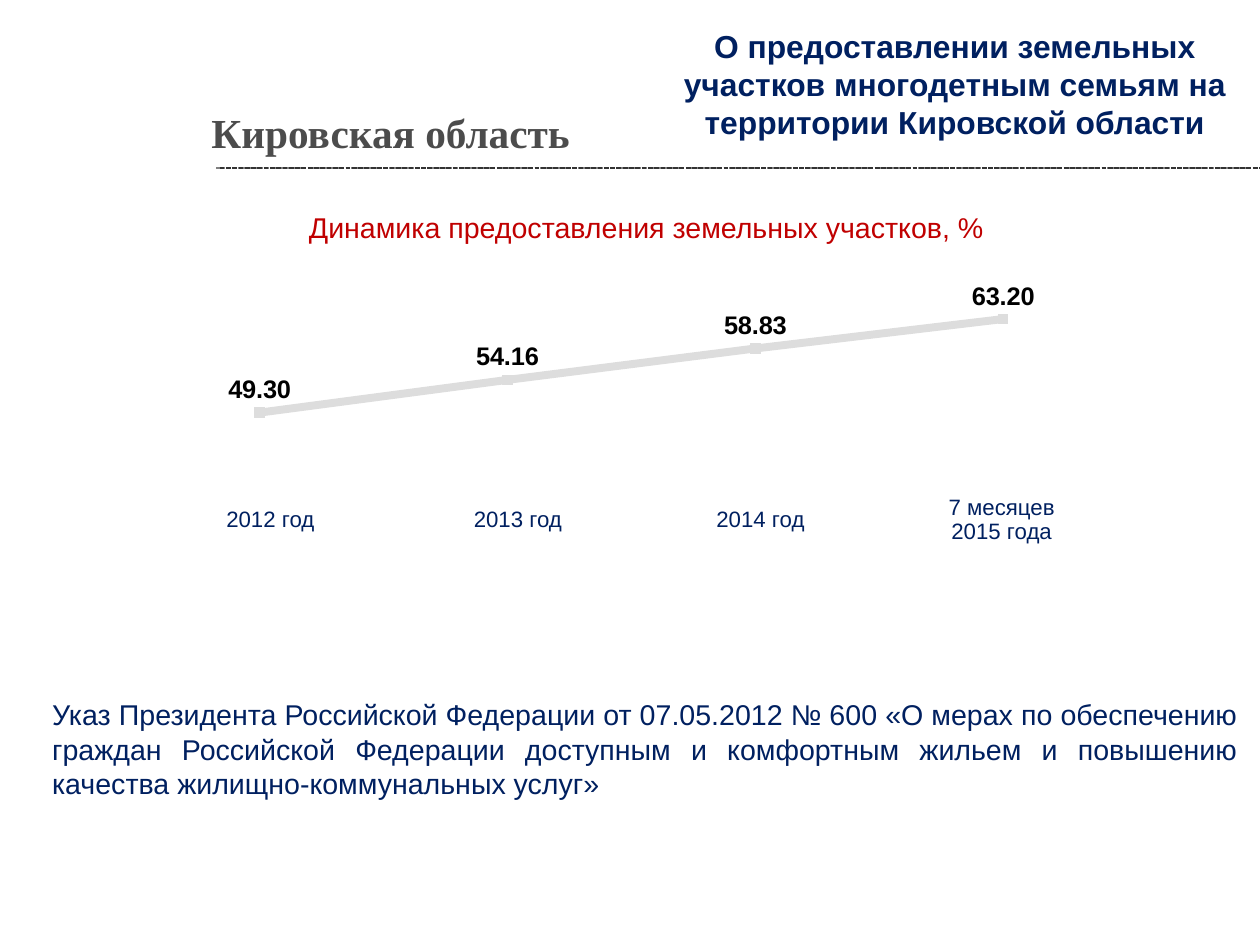
from lxml.etree import SubElement
from pptx import Presentation
from pptx.chart.data import CategoryChartData
from pptx.dml.color import RGBColor
from pptx.enum.chart import XL_CHART_TYPE, XL_LABEL_POSITION, XL_MARKER_STYLE
from pptx.enum.dml import MSO_LINE
from pptx.enum.shapes import MSO_CONNECTOR
from pptx.enum.text import MSO_ANCHOR, PP_ALIGN
from pptx.oxml import parse_xml
from pptx.oxml.ns import nsdecls, qn
from pptx.util import Cm, Pt

NAVY = RGBColor(0x00, 0x20, 0x60)
RED = RGBColor(0xC0, 0x00, 0x00)
GRAPHITE = RGBColor(0x4C, 0x4C, 0x4C)
GRAY = RGBColor(0x80, 0x80, 0x80)
DARK = RGBColor(0x33, 0x33, 0x33)
SILVER = RGBColor(0xDD, 0xDD, 0xDD)
BLACK = RGBColor(0x00, 0x00, 0x00)

SHARES = [49.30, 54.16, 58.83, 63.20]
PERIODS = [
    (6.01, "2012 год"),
    (11.51, "2013 год"),
    (16.9, "2014 год"),
    (22.26, "7 месяцев 2015 года"),
]
PERIOD_WIDTH = 3.38


def add_text(slide, box, text, size, color, font="Arial", bold=False,
             align=PP_ALIGN.CENTER, spacing=1.0, wrap=True):
    frame = slide.shapes.add_textbox(*map(Cm, box)).text_frame
    frame.word_wrap = wrap
    paragraph = frame.paragraphs[0]
    paragraph.text = text
    paragraph.alignment = align
    paragraph.line_spacing = spacing
    paragraph.font.name = font
    paragraph.font.size = Pt(size)
    paragraph.font.bold = bold
    paragraph.font.color.rgb = color
    return frame


def add_label(slide, box, text, size, color):
    frame = add_text(slide, box, text, size, color, spacing=0.9)
    frame.vertical_anchor = MSO_ANCHOR.MIDDLE
    frame.margin_left = frame.margin_right = 0
    frame.margin_top = frame.margin_bottom = 0


def add_dotted_rule(slide, left, right, top, color, width):
    rule = slide.shapes.add_connector(
        MSO_CONNECTOR.STRAIGHT, Cm(left), Cm(top), Cm(right), Cm(top))
    rule.line.color.rgb = color
    rule.line.width = Pt(width)
    rule.line.dash_style = MSO_LINE.SQUARE_DOT
    SubElement(rule._element.spPr, qn("a:effectLst"))


def set_plot_layout(chart, x, y, width, height):
    plot_area = chart._chartSpace.chart.plotArea
    for layout in plot_area.findall(qn("c:layout")):
        plot_area.remove(layout)
    plot_area.insert(0, parse_xml(
        f'<c:layout {nsdecls("c")}><c:manualLayout>'
        '<c:layoutTarget val="inner"/>'
        '<c:xMode val="edge"/><c:yMode val="edge"/>'
        f'<c:x val="{x}"/><c:y val="{y}"/>'
        f'<c:w val="{width}"/><c:h val="{height}"/>'
        '</c:manualLayout></c:layout>'))


def add_share_chart(slide, box):
    data = CategoryChartData(number_format="0.00")
    data.categories = ["1", "2", "3", "4"]
    data.add_series("Series 1", SHARES)
    chart = slide.shapes.add_chart(
        XL_CHART_TYPE.LINE_MARKERS, *map(Cm, box), data).chart
    chart.has_legend = False
    chart.has_title = False
    chart.font.name = "Arial"
    chart.font.size = Pt(10)
    chart.font.color.rgb = BLACK
    set_plot_layout(chart, 0.034, 0.047, 0.966, 0.872)

    chart.category_axis.visible = False
    chart.value_axis.visible = False
    chart.value_axis.has_major_gridlines = False
    chart.value_axis.minimum_scale = 0
    chart.value_axis.maximum_scale = 70

    plot = chart.plots[0]
    plot.vary_by_categories = False
    shares = plot.series[0]
    shares.smooth = False
    shares.format.line.color.rgb = SILVER
    shares.format.line.width = Pt(5)
    shares.marker.style = XL_MARKER_STYLE.SQUARE
    shares.marker.size = 6
    shares.marker.format.fill.solid()
    shares.marker.format.fill.fore_color.rgb = SILVER
    shares.marker.format.line.color.rgb = SILVER

    labels = shares.data_labels
    labels.show_value = True
    labels.position = XL_LABEL_POSITION.ABOVE
    labels.number_format = "0.00"
    labels.number_format_is_linked = False
    labels.font.name = "Arial"
    labels.font.size = Pt(16)
    labels.font.bold = True
    labels.font.color.rgb = BLACK


def main():
    deck = Presentation()
    deck.slide_width, deck.slide_height = Cm(28), Cm(21)
    slide = deck.slides.add_slide(deck.slide_layouts[6])

    add_text(slide, (4.45, 2.39, 8.51, 1.24), "Кировская область", 26, GRAPHITE,
             font="Times New Roman", bold=True, align=PP_ALIGN.LEFT,
             spacing=0.9, wrap=False)
    add_dotted_rule(slide, 4.8, 27.81, 3.73, GRAY, 0.85)
    add_dotted_rule(slide, 4.88, 28, 3.73, DARK, 1)
    add_label(slide, (5.69, 4.55, 17.35, 1.07),
              "Динамика предоставления земельных участков, %", 18, RED)
    add_text(slide, (14.22, 0.46, 14, 2.82),
             "О предоставлении земельных участков многодетным семьям "
             "на территории Кировской области", 20, NAVY, bold=True)
    add_text(slide, (0.91, 15.37, 26.85, 2.57),
             "Указ Президента Российской Федерации от 07.05.2012 № 600 "
             "«О мерах по обеспечению граждан Российской Федерации доступным "
             "и комфортным жильем и повышению качества жилищно-коммунальных "
             "услуг»", 18, NAVY, align=PP_ALIGN.JUSTIFY)
    add_share_chart(slide, (2.24, 5.51, 22.81, 12.01))
    for center, period in PERIODS:
        add_label(slide, (center - PERIOD_WIDTH / 2, 11.02, PERIOD_WIDTH, 1.07),
                  period, 14, NAVY)

    deck.save("out.pptx")


if __name__ == "__main__":
    main()
